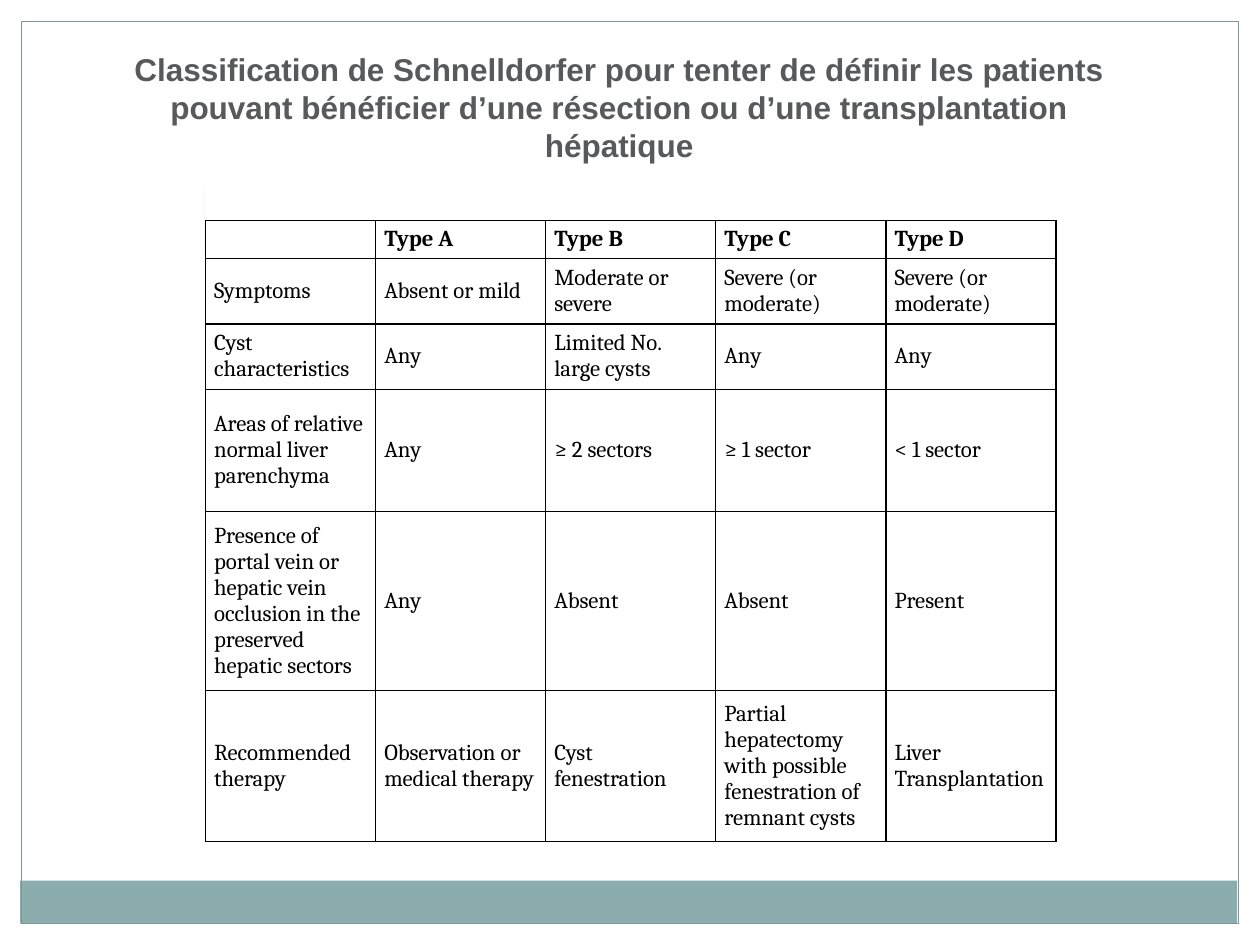
from lxml import etree
from pptx import Presentation
from pptx.dml.color import RGBColor
from pptx.enum.shapes import MSO_SHAPE
from pptx.enum.text import MSO_ANCHOR, PP_ALIGN
from pptx.oxml.ns import qn
from pptx.util import Inches, Pt


def color(hex_string):
    return RGBColor.from_string(hex_string)


def write_text(frame, text, *, font, size, fill, bold=False, align=PP_ALIGN.LEFT):
    frame.word_wrap = True
    paragraph = frame.paragraphs[0]
    paragraph.alignment = align
    if not text:
        # An empty paragraph takes its height from its end mark
        etree.SubElement(paragraph._p, qn("a:endParaRPr"), sz=str(size * 100))
        return
    run = paragraph.add_run()
    run.text = text
    run.font.name = font
    run.font.size = Pt(size)
    run.font.bold = bold
    run.font.color.rgb = color(fill)


class SlideBuilder:
    heading_font, body_font = "Arial", "Cambria"
    heading_color, ink = "58595B", "000000"

    def __init__(self, slide):
        self.slide = slide

    def title(self, text, left, top, width, height):
        heading = self.slide.shapes.title
        heading.left, heading.top = Inches(left), Inches(top)
        heading.width, heading.height = Inches(width), Inches(height)
        heading.text_frame.vertical_anchor = MSO_ANCHOR.TOP
        write_text(heading.text_frame, text, font=self.heading_font, size=18,
                   fill=self.heading_color, bold=True, align=PP_ALIGN.CENTER)

    def rectangle(self, left, top, width, height, fill=None, line=None):
        box = self.slide.shapes.add_shape(
            MSO_SHAPE.RECTANGLE, Inches(left), Inches(top), Inches(width), Inches(height))
        box.shadow.inherit = False
        if fill:
            box.fill.solid()
            box.fill.fore_color.rgb = color(fill)
        else:
            box.fill.background()
        if line:
            box.line.color.rgb = color(line)
            box.line.width = Pt(0.75)
        else:
            box.line.fill.background()

    def cell_borders(self, cell):
        properties = cell._tc.get_or_add_tcPr()
        for position, side in enumerate(("a:lnL", "a:lnR", "a:lnT", "a:lnB")):
            border = etree.Element(qn(side), w=str(Pt(1)))
            solid = etree.SubElement(border, qn("a:solidFill"))
            etree.SubElement(solid, qn("a:srgbClr"), val=self.ink)
            properties.insert(position, border)

    def table(self, rows, left, top, column_width, row_heights):
        columns = len(rows[0])
        grid = self.slide.shapes.add_table(
            len(rows), columns, Inches(left), Inches(top),
            Inches(column_width * columns), Inches(sum(row_heights))).table
        grid.first_row = grid.horz_banding = False
        for column in grid.columns:
            column.width = Inches(column_width)
        for row_index, (values, height) in enumerate(zip(rows, row_heights)):
            grid.rows[row_index].height = Inches(height)
            for column_index, value in enumerate(values):
                cell = grid.cell(row_index, column_index)
                cell.fill.background()
                cell.vertical_anchor = MSO_ANCHOR.MIDDLE
                cell.margin_left = cell.margin_right = Inches(0.07)
                cell.margin_top = cell.margin_bottom = Inches(0.04)
                write_text(cell.text_frame, value, font=self.body_font, size=13,
                           fill=self.ink, bold=row_index == 0)
                self.cell_borders(cell)


CLASSIFICATION = [
    ("", "Type A", "Type B", "Type C", "Type D"),
    ("Symptoms", "Absent or mild", "Moderate or severe",
     "Severe (or moderate)", "Severe (or moderate)"),
    ("Cyst characteristics", "Any", "Limited No. large cysts", "Any", "Any"),
    ("Areas of relative normal liver parenchyma", "Any",
     "≥ 2 sectors", "≥ 1 sector", "< 1 sector"),
    ("Presence of portal vein or hepatic vein occlusion in the preserved hepatic sectors",
     "Any", "Absent", "Absent", "Present"),
    ("Recommended therapy", "Observation or medical therapy", "Cyst fenestration",
     "Partial hepatectomy with possible fenestration of remnant cysts",
     "Liver Transplantation"),
]


def main():
    presentation = Presentation()
    presentation.slide_width, presentation.slide_height = Inches(10), Inches(7.5)
    builder = SlideBuilder(presentation.slides.add_slide(presentation.slide_layouts[5]))

    # White margins, footer band and page frame
    for margin in ((0, 0, 10, 0.17), (9.83, 0, 0.17, 7.5), (0, 0, 0.17, 7.5)):
        builder.rectangle(*margin, fill="FFFFFF")
    builder.rectangle(0.16, 6.99, 9.66, 0.34, fill="8CADAE")
    builder.rectangle(0.17, 0.17, 9.66, 7.16, line="7C999A")

    # Classification table with the thin rule at its corner
    builder.table(CLASSIFICATION, 1.63, 1.75, 1.35, (0.3, 0.52, 0.52, 0.97, 1.42, 1.2))
    builder.rectangle(1.62, 1.49, 0, 0.51, fill="CCCCCC")

    # Heading
    builder.title("Classification de Schnelldorfer pour tenter de définir les patients "
                  "pouvant bénéficier d’une résection ou d’une transplantation hépatique",
                  0.78, 0.35, 8.27, 1.01)

    presentation.save("out.pptx")


if __name__ == "__main__":
    main()
